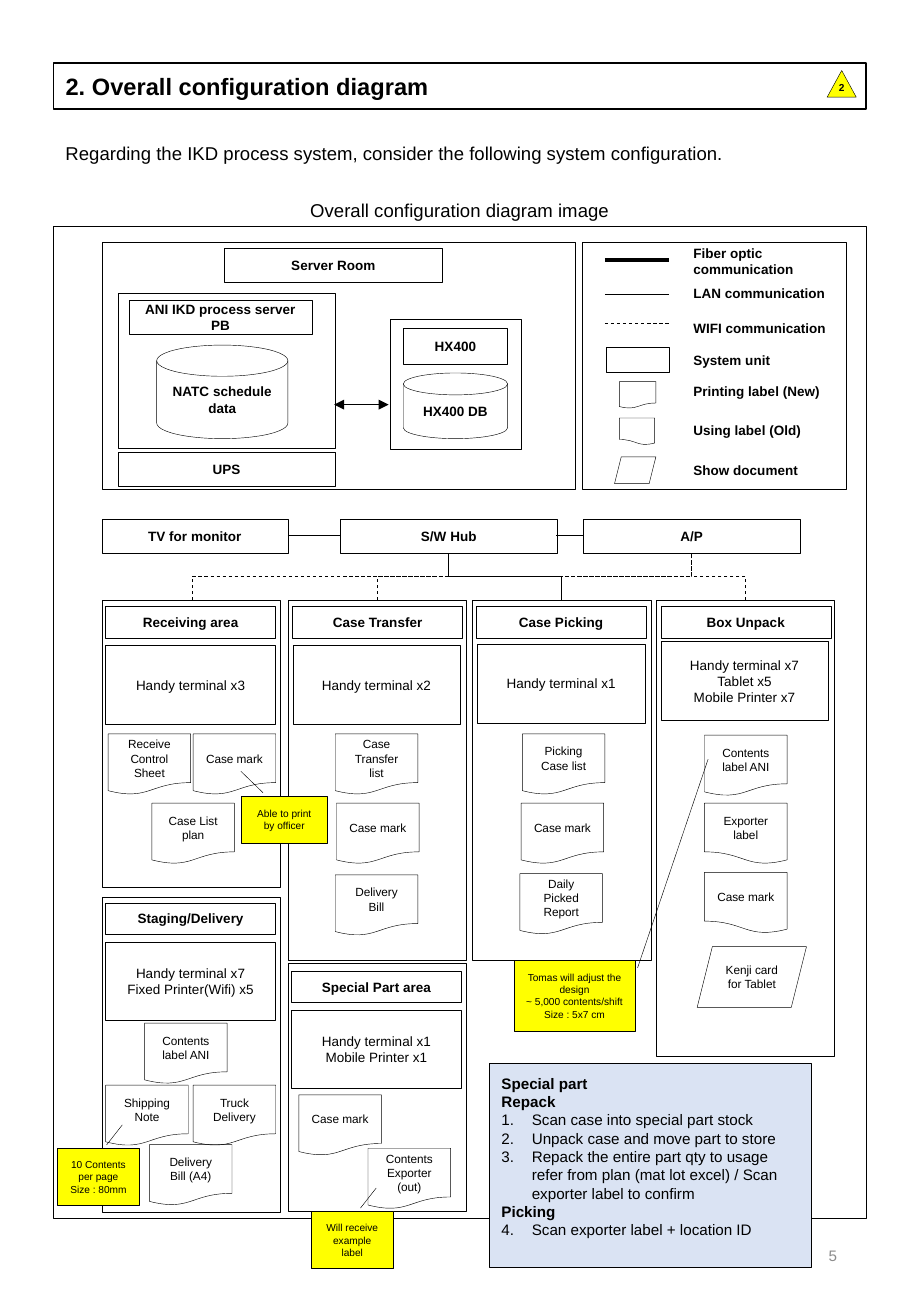
from lxml.etree import SubElement
from pptx import Presentation
from pptx.dml.color import RGBColor
from pptx.enum.dml import MSO_LINE
from pptx.enum.shapes import MSO_CONNECTOR as WIRE, MSO_SHAPE as SHAPE
from pptx.enum.text import MSO_ANCHOR as ANCHOR, MSO_AUTO_SIZE, PP_ALIGN as ALIGN
from pptx.oxml.ns import qn
from pptx.util import Emu, Pt

COLORS = {"ink": "000000", "paper": "FFFFFF", "note": "FFFF00",
          "steps": "DAE3F3", "page": "8C8C8C"}
PX = 9144  # EMU in one px, 100 px to the inch


def px(*lengths):
    return [Emu(int(length * PX)) for length in lengths]


class Diagram:
    font = "Arial"

    def __init__(self, slide):
        self.slide = slide
        self.shapes = slide.shapes

    def color(self, name):
        return RGBColor.from_string(COLORS[name])

    def style(self, paragraph, size, bold=False, align=ALIGN.CENTER, color="ink"):
        paragraph.alignment = align
        font = paragraph.font
        font.name, font.size, font.bold = self.font, Pt(size), bold
        font.color.rgb = self.color(color)

    def set_text(self, shape, text, size, anchor=ANCHOR.MIDDLE, **style):
        frame = shape.text_frame
        frame.word_wrap = True
        frame.auto_size = MSO_AUTO_SIZE.NONE
        frame.vertical_anchor = anchor
        for i, line in enumerate(text.split("\n")):
            paragraph = frame.add_paragraph() if i else frame.paragraphs[0]
            paragraph.text = line
            self.style(paragraph, size, **style)

    def outline(self, shape, width):
        shape.line.color.rgb = self.color("ink")
        shape.line.width = Pt(width)

    def title(self, text, *box):
        title = self.shapes.title
        title.left, title.top, title.width, title.height = px(*box)
        self.outline(title, 1)
        self.set_text(title, text, 14, bold=True, align=ALIGN.LEFT)

    def label(self, text, *box, size=8, **style):
        self.set_text(self.shapes.add_textbox(*px(*box)), text, size, **style)

    def shape(self, kind, *box, text="", size=8, fill=None, flip=False, **style):
        shape = self.shapes.add_shape(kind, *px(*box))
        shape.shadow.inherit = False
        if fill:
            shape.fill.solid()
            shape.fill.fore_color.rgb = self.color(fill)
        else:
            shape.fill.background()
        self.outline(shape, 0.25)
        if flip:
            shape._element.spPr.find(qn("a:xfrm")).set("flipH", "1")
        if text:
            self.set_text(shape, text, size, **style)
        return shape

    def box(self, *box, text="", bold=True, **options):
        return self.shape(SHAPE.RECTANGLE, *box, text=text, bold=bold, **options)

    def document(self, left, top, text, flip=False):
        self.shape(SHAPE.FLOWCHART_DOCUMENT, left, top, 68, 50, text=text, size=7, flip=flip)

    def callout(self, *box, text, pointer):
        note = self.shape(SHAPE.LINE_CALLOUT_1, *box, text=text, size=6, fill="note")
        for i, value in enumerate(pointer):
            note.adjustments[i] = value

    def line(self, *ends, kind=WIRE.STRAIGHT, width=0.5, dash=False, arrows=False):
        wire = self.shapes.add_connector(kind, *px(*ends))
        self.outline(wire, width)
        if dash:
            wire.line.dash_style = MSO_LINE.DASH
        properties = wire._element.spPr
        if arrows:
            for end in ("a:headEnd", "a:tailEnd"):
                SubElement(properties.find(qn("a:ln")), qn(end)).set("type", "triangle")
        SubElement(properties, qn("a:effectLst"))
        return wire

    def riser(self, x1, y1, x2, y2, dash=True):
        """Elbow that leaves and arrives vertically: a quarter-turned connector."""
        wire = self.line(x1, y1, x2, y2, kind=WIRE.ELBOW, dash=dash)
        run, rise = abs(x2 - x1), abs(y2 - y1)
        wire.left, wire.top = px((x1 + x2 - rise) / 2, (y1 + y2 - run) / 2)
        wire.width, wire.height = px(rise, run)
        rightward = x2 > x1
        xfrm = wire._element.spPr.find(qn("a:xfrm"))
        xfrm.set("rot", str((90 if rightward else 270) * 60000))
        xfrm.set("flipH", "1" if rightward else "0")
        xfrm.set("flipV", "1")

    def steps(self, *box, lines):
        panel = self.box(*box, fill="steps")
        frame = panel.text_frame
        frame.word_wrap = True
        frame.vertical_anchor = ANCHOR.TOP
        frame.margin_top = px(9)[0]
        number = 0
        for i, (text, heading) in enumerate(lines):
            paragraph = frame.add_paragraph() if i else frame.paragraphs[0]
            paragraph.text = text
            if not heading:
                number += 1
                properties = paragraph._p.get_or_add_pPr()
                properties.set("marL", str(25 * PX))
                properties.set("indent", str(-25 * PX))
                SubElement(properties, qn("a:buFont")).set("typeface", "+mj-lt")
                bullet = SubElement(properties, qn("a:buAutoNum"))
                bullet.set("type", "arabicPeriod")
                if lines[i - 1][1] and number > 1:
                    bullet.set("startAt", str(number))
            self.style(paragraph, 9, bold=heading, align=ALIGN.LEFT)


# Frame left, top, height; header left, top; terminals left, top, width; documents
AREAS = [
    ("Receiving area", (84, 494, 236), (87, 499), (87, 531, 140), "Handy terminal x3",
     [(89, 604, "Receive Control Sheet"), (159, 604, "Case mark"), (125, 661, "Case List plan")]),
    ("Case Transfer", (237, 494, 296), (241, 499), (241, 531, 138), "Handy terminal x2",
     [(276, 604, "Case Transfer list"), (277, 661, "Case mark"), (276, 720, "Delivery Bill")]),
    ("Case Picking", (389, 494, 296), (392, 499), (393, 530, 138), "Handy terminal x1",
     [(430, 604, "Picking Case list"), (429, 661, "Case mark"), (428, 719, "Daily Picked Report")]),
    ("Box Unpack", (540, 494, 375), (544, 499), (544, 528, 138),
     "Handy terminal x7\nTablet x5\nMobile Printer x7",
     [(580, 605, "Contents label ANI"), (580, 661, "Exporter label", True),
      (580, 718, "Case mark", True)]),
    ("Staging/Delivery", (84, 738, 260), (87, 743), (87, 775, 140),
     "Handy terminal x7\nFixed Printer(Wifi) x5",
     [(119, 842, "Contents label ANI"), (87, 893, "Shipping Note"),
      (159, 893, "Truck Delivery"), (123, 942, "Delivery Bill (A4)")]),
    ("Special Part area", (237, 793, 204), (240, 799), (240, 831, 140),
     "Handy terminal x1\nMobile Printer x1",
     [(246, 901, "Case mark"), (303, 945, "Contents Exporter\n(out)")]),
]
LEGEND = [(202, "Fiber optic communication"), (228, "LAN communication"),
          (257, "WIFI communication"), (283, "System unit"), (309, "Printing label (New)"),
          (341, "Using label (Old)"), (374, "Show document")]
STEPS = [("Special part", True), ("Repack", True),
         ("Scan case into special part stock", False),
         ("Unpack case and move part to store", False),
         ("Repack the entire part qty to usage refer from plan (mat lot excel) / "
          "Scan exporter label to confirm", False),
         ("Picking", True), ("Scan exporter label + location ID", False)]
NOTES = [((199, 655, 70, 39), "Able to print by officer", (-0.07, 0.25, -0.52, -0.01)),
         ((423, 790, 100, 59), "Tomas will adjust the design\n~ 5,000 contents/shift\n"
          "Size : 5x7 cm", (0.11, 1.02, -2.8, 1.6)),
         ((47, 945, 68, 47), "10 Contents per page\nSize : 80mm", (-0.06, 0.6, -0.41, 0.79)),
         ((256, 997, 68, 47), "Will receive example label", (-0.06, 0.6, -0.41, 0.79))]


def main():
    deck = Presentation()
    deck.slide_width, deck.slide_height = px(750, 1083)
    diagram = Diagram(deck.slides.add_slide(deck.slide_layouts[5]))

    # Heading, introduction and page number
    diagram.title("2. Overall configuration diagram", 44, 52, 669, 38)
    revision = diagram.shape(SHAPE.ISOSCELES_TRIANGLE, 681, 58, 24, 22, text="2", size=6,
                             fill="note", bold=True)
    revision.text_frame.margin_top = 0
    diagram.label("Regarding the IKD process system, consider the following system configuration.",
                  44, 112, 669, 29, size=11, anchor=ANCHOR.TOP, align=ALIGN.LEFT)
    diagram.label("Overall configuration diagram image", 44, 159, 669, 29, size=11,
                  anchor=ANCHOR.TOP)
    diagram.label("5", 530, 1004, 169, 58, size=9, align=ALIGN.RIGHT, color="page")
    diagram.box(44, 186, 669, 817)

    # Server room
    diagram.box(84, 199, 390, 204)
    diagram.box(185, 204, 179, 28, text="Server Room")
    diagram.box(97, 241, 179, 128)
    diagram.box(106, 247, 151, 28, text="ANI IKD process server PB")
    diagram.shape(SHAPE.FLOWCHART_MAGNETIC_DISK, 129, 284, 108, 77,
                  text="NATC schedule data", bold=True)
    diagram.box(97, 372, 179, 28, text="UPS")
    diagram.box(321, 263, 108, 107)
    diagram.box(332, 270, 86, 30, text="HX400")
    diagram.shape(SHAPE.FLOWCHART_MAGNETIC_DISK, 332, 307, 86, 54, text="HX400 DB", bold=True)
    diagram.line(275, 333, 320, 333, arrows=True)

    # Legend
    diagram.box(479, 199, 218, 204)
    for top, meaning in LEGEND:
        diagram.label(meaning, 561, top, 129, 26, bold=True, align=ALIGN.LEFT)
    diagram.line(498, 214, 551, 214, width=2.25)
    diagram.line(498, 242, 551, 242)
    diagram.line(498, 266, 551, 266, dash=True)
    diagram.box(499, 286, 52, 20)
    diagram.shape(SHAPE.FLOWCHART_DOCUMENT, 510, 314, 30, 22)
    diagram.shape(SHAPE.FLOWCHART_DOCUMENT, 510, 344, 29, 22, flip=True)
    diagram.shape(SHAPE.PARALLELOGRAM, 506, 376, 34, 22)

    # Network
    for left, width, device in ((84, 153, "TV for monitor"), (280, 179, "S/W Hub"),
                                (480, 179, "A/P")):
        diagram.box(left, 427, width, 28, text=device)
    diagram.line(237, 441, 280, 441)
    diagram.line(458, 441, 480, 441)
    for area_center in (158, 311, 614):
        diagram.riser(area_center, 494, 569, 455)
    diagram.riser(462, 494, 369, 455, dash=False)

    # Work areas
    for name, (left, top, height), header, terminals, devices, documents in AREAS:
        diagram.box(left, top, 147, height)
        diagram.box(*header, 140, 26, text=name)
        diagram.box(*terminals, 65, text=devices, bold=False, fill="paper")
        for document in documents:
            diagram.document(*document)
    diagram.shape(SHAPE.PARALLELOGRAM, 574, 779, 90, 50, text="Kenji card for Tablet", size=7)

    # Special part steps and notes
    diagram.steps(403, 875, 265, 168, lines=STEPS)
    for place, text, pointer in NOTES:
        diagram.callout(*place, text=text, pointer=pointer)

    deck.save("out.pptx")


if __name__ == "__main__":
    main()
